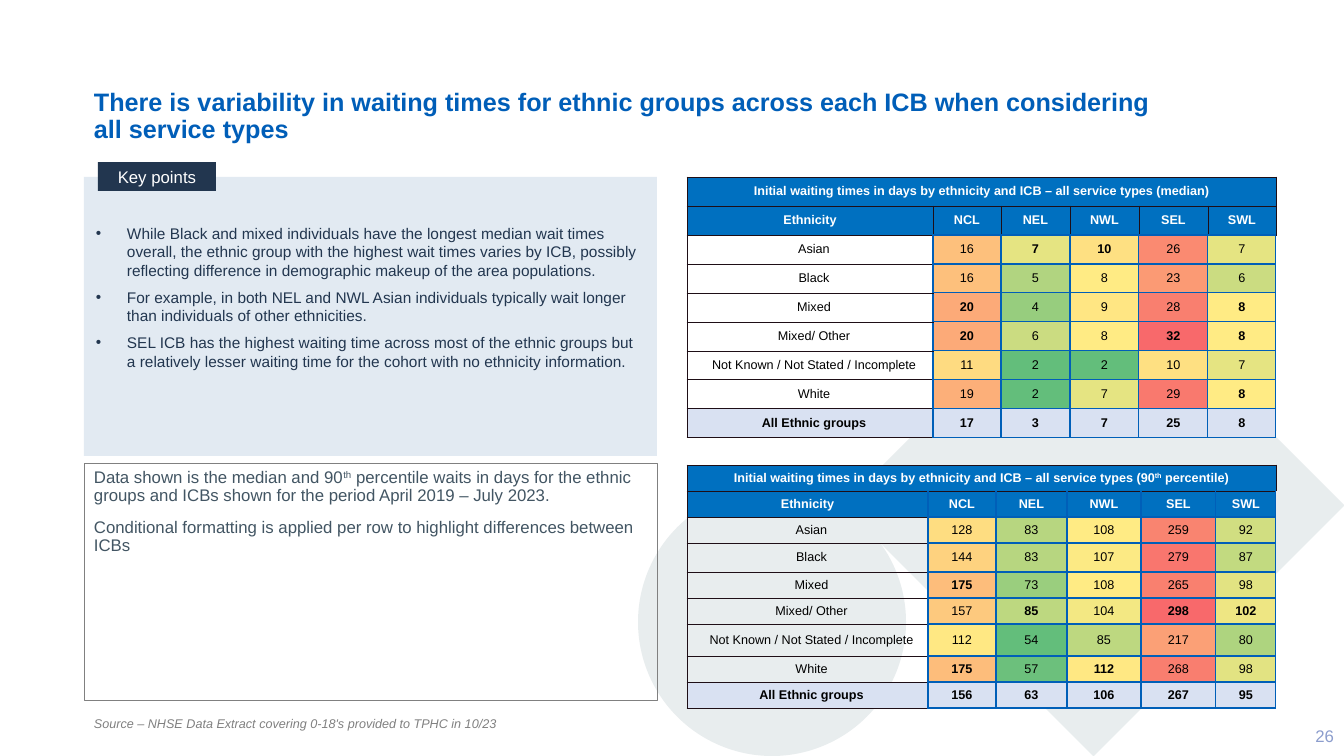
from lxml.etree import SubElement
from pptx import Presentation
from pptx.dml.color import RGBColor
from pptx.enum.shapes import MSO_SHAPE
from pptx.enum.text import MSO_ANCHOR, PP_ALIGN
from pptx.oxml.ns import qn
from pptx.util import Pt

PX = 9071  # EMU in one px, at 100.8 px to the inch
color = RGBColor.from_string

BLACK_EDGE, BLUE_EDGE = ("1E0E16", 0.5), ("005FB8", 1)
LOW, MIDDLE, HIGH = (color(value) for value in ("63BE7B", "FFEB84", "F8696B"))

presentation = Presentation()
presentation.slide_width, presentation.slide_height = 1344 * PX, 756 * PX
slide = presentation.slides.add_slide(presentation.slide_layouts[6])


def add_box(kind, left, top, width, height, fill=None, line=None):
    """Add a preset shape, or a text box when kind is None."""
    place = [length * PX for length in (left, top, width, height)]
    if kind is None:
        shape = slide.shapes.add_textbox(*place)
    else:
        shape = slide.shapes.add_shape(kind, *place)
        shape.shadow.inherit = False
        if fill:
            shape.fill.solid()
            shape.fill.fore_color.rgb = color(fill)
        else:
            shape.fill.background()
        if line:
            shape.line.color.rgb = color(line)
            shape.line.width = Pt(0.75)
        else:
            shape.line.fill.background()
    shape.text_frame.word_wrap = True
    shape.text_frame.vertical_anchor = MSO_ANCHOR.TOP
    return shape


def write(frame, texts, size, text_color, align=PP_ALIGN.LEFT, bold=False, italic=False,
          spacing=None, before=0, after=0, indent=0, bullet=None):
    """Write one paragraph per text; parts between ^ marks are superscript."""
    for index, text in enumerate(texts):
        paragraph = frame.paragraphs[0] if index == 0 else frame.add_paragraph()
        paragraph.alignment = align
        if spacing:
            paragraph.line_spacing = spacing
        if before and index:
            paragraph.space_before = Pt(before)
        if after:
            paragraph.space_after = Pt(after)
        properties = paragraph._p.get_or_add_pPr()
        if indent:
            properties.set("marL", str(indent * PX))
        if bullet:
            properties.set("indent", str(-indent * PX))
            SubElement(properties, qn("a:buFont"), typeface="Arial")
            SubElement(properties, qn("a:buChar"), char=bullet)
        font = paragraph.font
        font.name, font.size, font.bold, font.italic = "Arial", Pt(size), bold, italic
        font.color.rgb = color(text_color)
        for position, part in enumerate(text.split("^")):
            run = paragraph.add_run()
            run.text = part
            if position % 2:
                run._r.get_or_add_rPr().set("baseline", "30000")


# Background shapes
add_box(MSO_SHAPE.OVAL, 638, 488, 268, 268, "E8EDEE")
diamond = add_box(MSO_SHAPE.RECTANGLE, 916, 328, 355, 355, "E8EDEE")
diamond.rotation = 45

# Title, source and notes
title = add_box(None, 84, 85, 1085, 81)
write(title.text_frame, ["There is variability in waiting times for ethnic groups across each ICB "
                         "when considering all service types"], 18, "005EB8", bold=True, spacing=0.9)
source = add_box(None, 84, 711, 1175, 25)
write(source.text_frame, ["Source – NHSE Data Extract covering 0-18's provided to TPHC in 10/23"],
      9, "808080", italic=True)
notes = add_box(MSO_SHAPE.RECTANGLE, 84, 464, 574, 237, line="808080")
write(notes.text_frame, [
    "Data shown is the median and 90^th^ percentile waits in days for the ethnic groups and ICBs "
    "shown for the period April 2019 – July 2023.",
    "Conditional formatting is applied per row to highlight differences between ICBs",
], 12, "425563", spacing=0.9, before=10)

# Key points
key_points = add_box(MSO_SHAPE.RECTANGLE, 84, 177, 573, 279, "C7D6E7")
fill_color = key_points._element.spPr.find(qn("a:solidFill"))[0]
SubElement(fill_color, qn("a:alpha"), val="50000")
frame = key_points.text_frame
frame.margin_left = frame.margin_right = 12 * PX
frame.margin_top = 47 * PX
write(frame, [
    "While Black and mixed individuals have the longest median wait times overall, the ethnic group "
    "with the highest wait times varies by ICB, possibly reflecting difference in demographic makeup "
    "of the area populations.",
    "For example, in both NEL and NWL Asian individuals typically wait longer than individuals of "
    "other ethnicities.",
    "SEL ICB has the highest waiting time across most of the ethnic groups but a relatively lesser "
    "waiting time for the cohort with no ethnicity information.",
], 11, "22364F", after=6, indent=31, bullet="•")
key_label = add_box(MSO_SHAPE.RECTANGLE, 98, 162, 118, 29, "22364F")
key_label.text_frame.vertical_anchor = MSO_ANCHOR.MIDDLE
write(key_label.text_frame, ["Key points"], 12, "FFFFFF", PP_ALIGN.CENTER)

# Waiting time tables
HEADINGS = ["Ethnicity", "NCL", "NEL", "NWL", "SEL", "SWL"]
GROUPS = ["Asian", "Black", "Mixed", "Mixed/ Other", "Not Known / Not Stated / Incomplete",
          "White", "All Ethnic groups"]
TABLES = [
    dict(heading="(median)", top=177, widths=[246, 68, 69, 69, 69, 68], heights=[29] * 9,
         middle=8, heading_edge=BLACK_EDGE,
         days=[[16, 7, 10, 26, 7], [16, 5, 8, 23, 6], [20, 4, 9, 28, 8], [20, 6, 8, 32, 8],
               [11, 2, 2, 10, 7], [19, 2, 7, 29, 8], [17, 3, 7, 25, 8]]),
    dict(heading="(90^th^ percentile)", top=465, widths=[241, 68, 71, 74, 75, 60],
         heights=[26, 26, 26, 29, 26, 26, 32, 26, 26], middle=108, heading_edge=BLUE_EDGE,
         days=[[128, 83, 108, 259, 92], [144, 83, 107, 279, 87], [175, 73, 108, 265, 98],
               [157, 85, 104, 298, 102], [112, 54, 85, 217, 80], [175, 57, 112, 268, 98],
               [156, 63, 106, 267, 95]]),
]

for data in TABLES:
    table = slide.shapes.add_table(9, 6, 687 * PX, data["top"] * PX, sum(data["widths"]) * PX,
                                   sum(data["heights"]) * PX).table
    table.first_row = table.horz_banding = False
    for column, width in zip(table.columns, data["widths"]):
        column.width = width * PX
    for row, height in zip(table.rows, data["heights"]):
        row.height = height * PX
    table.cell(0, 0).merge(table.cell(0, 5))

    group_days = data["days"][:-1]
    lowest, highest = min(map(min, group_days)), max(map(max, group_days))
    column_peaks = [max(column) for column in zip(*group_days)]
    heading = f"Initial waiting times in days by ethnicity and ICB – all service types {data['heading']}"
    content = [[heading] + [""] * 5, HEADINGS]
    content += [[group, *days] for group, days in zip(GROUPS, data["days"])]

    for row, values in enumerate(content):
        for column, value in enumerate(values):
            cell = table.cell(row, column)
            cell.vertical_anchor = MSO_ANCHOR.MIDDLE
            cell.margin_left = cell.margin_right = cell.margin_top = cell.margin_bottom = 0

            edges = dict.fromkeys(("lnL", "lnR", "lnT", "lnB"), BLUE_EDGE)
            if row == 0:
                edges = dict.fromkeys(edges, BLACK_EDGE)
            elif column == 0:
                edges = dict.fromkeys(edges, BLACK_EDGE)
                edges["lnR"] = data["heading_edge"] if row == 1 else BLUE_EDGE
            elif row == 1:
                edges.update(lnL=data["heading_edge"], lnR=data["heading_edge"], lnT=BLACK_EDGE)
            for side, (edge_color, points) in edges.items():
                line = SubElement(cell._tc.get_or_add_tcPr(), qn(f"a:{side}"), w=str(Pt(points)))
                SubElement(SubElement(line, qn("a:solidFill")), qn("a:srgbClr"), val=edge_color)

            bold = row in (0, 1, 8)
            if row < 2:
                fill = color("0070C0")
            elif row == 8:
                fill = color("D9E1F2")
            elif column == 0:
                fill = None
            else:
                bold = value == column_peaks[column - 1]
                start, end, first, last = ((lowest, data["middle"], LOW, MIDDLE)
                                           if value < data["middle"]
                                           else (data["middle"], highest, MIDDLE, HIGH))
                share = (value - start) / (end - start)
                fill = RGBColor(*(round(a + (b - a) * share) for a, b in zip(first, last)))
            if fill:
                cell.fill.solid()
                cell.fill.fore_color.rgb = fill
            else:
                cell.fill.background()
            if value != "":
                write(cell.text_frame, [str(value)], 9, "FFFFFF" if row < 2 else "000000",
                      PP_ALIGN.CENTER, bold, indent=8 if row > 1 and column == 0 else 0)

# Page number
page_number = add_box(None, 1246, 716, 98, 40)
page_number.text_frame.vertical_anchor = MSO_ANCHOR.MIDDLE
write(page_number.text_frame, ["26"], 12, "8C9DCD", PP_ALIGN.RIGHT)

presentation.save("out.pptx")
